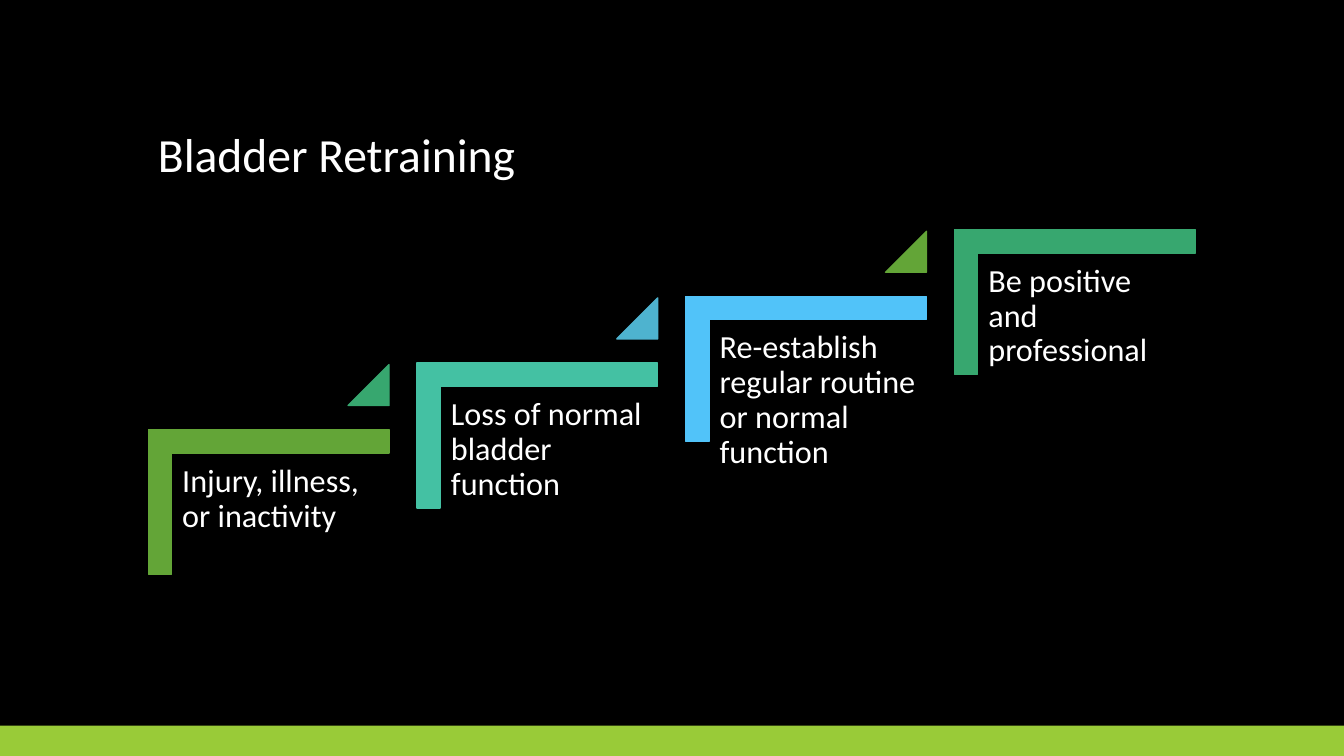
from pptx import Presentation
from pptx.dml.color import RGBColor
from pptx.enum.shapes import MSO_SHAPE
from pptx.enum.text import MSO_ANCHOR, MSO_AUTO_SIZE, PP_ALIGN
from pptx.util import Inches, Pt

WIDE, HIGH = Inches(13.33), Inches(7.5)
COL, ROW = WIDE / 100, HIGH / 100

BLACK = RGBColor(0x00, 0x00, 0x00)
WHITE = RGBColor(0xFF, 0xFF, 0xFF)
LIME = RGBColor(0x99, 0xCB, 0x38)
GREEN = RGBColor(0x63, 0xA5, 0x37)
JADE = RGBColor(0x37, 0xA7, 0x6F)
TEAL = RGBColor(0x44, 0xC1, 0xA3)
STEEL = RGBColor(0x4E, 0xB3, 0xCF)
SKY = RGBColor(0x51, 0xC3, 0xF9)

STEPS = [
    ("Injury, illness, or inactivity", GREEN, JADE),
    ("Loss of normal bladder function", TEAL, STEEL),
    ("Re-establish regular routine or normal function", SKY, GREEN),
    ("Be positive and professional", JADE, None),
]


def grid(col, row, cols, rows):
    """Turn grid columns and rows into a box of whole lengths."""
    return int(col * COL), int(row * ROW), int(cols * COL), int(rows * ROW)


def part(box, x, y, w, h):
    """Return a box given as shares of another box."""
    left, top, wide, high = box
    return int(left + x * wide), int(top + y * high), int(w * wide), int(h * high)


def write(frame, text, size=23, color=WHITE, font="Calibri", anchor=MSO_ANCHOR.TOP):
    """Fill a text frame with one formatted paragraph."""
    frame.word_wrap = True
    frame.auto_size = MSO_AUTO_SIZE.NONE
    frame.vertical_anchor = anchor
    frame.margin_left = frame.margin_right = Inches(0.1)
    frame.margin_top = frame.margin_bottom = Inches(0.1)
    para = frame.paragraphs[0]
    para.alignment = PP_ALIGN.LEFT
    para.line_spacing = 0.9
    run = para.add_run()
    run.text = text
    run.font.size = Pt(size)
    run.font.name = font
    run.font.color.rgb = color


def solid(shapes, kind, box, color, line=True):
    """Add a flat shape in one colour."""
    shape = shapes.add_shape(kind, *box)
    shape.shadow.inherit = False
    shape.fill.solid()
    shape.fill.fore_color.rgb = color
    if line:
        shape.line.color.rgb = color
        shape.line.width = Pt(1)
    else:
        shape.line.fill.background()
    return shape


def head(slide, box):
    """Set the slide title in the given box."""
    title = slide.shapes.title
    title.left, title.top, title.width, title.height = box
    write(title.text_frame, "Bladder Retraining", size=34, anchor=MSO_ANCHOR.BOTTOM)
    title.text_frame.margin_top = title.text_frame.margin_bottom = Inches(0.05)


def step(shapes, box, text, color, tip):
    """Draw one stair with its label and the triangle that leads on."""
    left, top, wide, high = box
    shift = (wide - high) // 2
    stair = solid(shapes, MSO_SHAPE.CORNER, (left + shift, top - shift, high, wide), color)
    stair.rotation = 90
    stair.adjustments[0] = stair.adjustments[1] = 0.16
    label = shapes.add_textbox(*part(box, 0.1, 0.17, 0.9, 1.31))
    write(label.text_frame, text)
    if tip:
        x, y, side, _ = part(box, 0.83, -0.45, 0.17, 0)
        mark = solid(shapes, MSO_SHAPE.ISOSCELES_TRIANGLE, (x, y, side, side), tip)
        mark.adjustments[0] = 1


def stairs(slide, box):
    """Lay the steps out from the lower left to the upper right of the box."""
    shapes = slide.shapes.add_group_shape().shapes
    last = len(STEPS) - 1
    wide, high = 0.23, 0.42
    for i, (text, color, tip) in enumerate(STEPS):
        share = i / last
        place = part(box, share * (1 - wide), (1 - share) * (1 - high), wide, high)
        step(shapes, place, text, color, tip)


def main():
    """Build and save the deck."""
    deck = Presentation()
    deck.slide_width, deck.slide_height = WIDE, HIGH
    slide = deck.slides.add_slide(deck.slide_layouts[5])
    slide.background.fill.solid()
    slide.background.fill.fore_color.rgb = BLACK
    solid(slide.shapes, MSO_SHAPE.RECTANGLE, grid(0, 96, 100, 4), LIME, line=False)
    head(slide, grid(11, 6.8, 78, 18))
    stairs(slide, grid(11.03, 30.4, 77.9, 45.6))
    deck.save("out.pptx")


if __name__ == "__main__":
    main()
